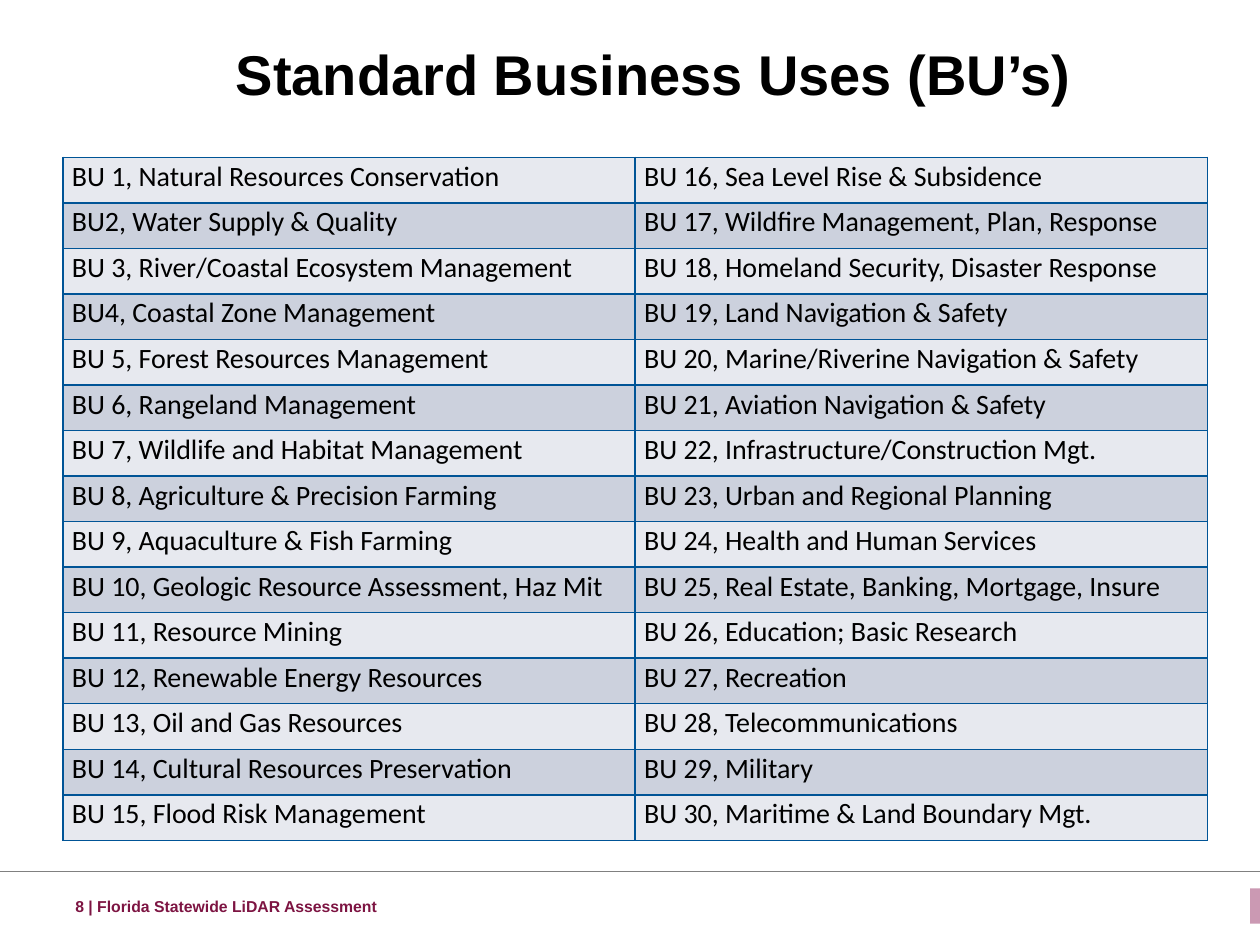
"""Build the Standard Business Uses slide."""
from lxml import etree
from pptx import Presentation
from pptx import util as u
from pptx.dml.color import RGBColor
from pptx.enum import shapes, text
from pptx.oxml import ns

TITLE = "Standard Business Uses (BU’s)"
FOOTER = "8 | Florida Statewide LiDAR Assessment"
USES = [
    ("BU 1, Natural Resources Conservation", "BU 16, Sea Level Rise & Subsidence"),
    ("BU2, Water Supply & Quality", "BU 17, Wildfire Management, Plan, Response"),
    ("BU 3, River/Coastal Ecosystem Management", "BU 18, Homeland Security, Disaster Response"),
    ("BU4, Coastal Zone Management", "BU 19, Land Navigation & Safety"),
    ("BU 5, Forest Resources Management", "BU 20, Marine/Riverine Navigation & Safety"),
    ("BU 6, Rangeland Management", "BU 21, Aviation Navigation & Safety"),
    ("BU 7, Wildlife and Habitat Management", "BU 22, Infrastructure/Construction Mgt."),
    ("BU 8, Agriculture & Precision Farming", "BU 23, Urban and Regional Planning"),
    ("BU 9, Aquaculture & Fish Farming", "BU 24, Health and Human Services"),
    ("BU 10, Geologic Resource Assessment, Haz Mit", "BU 25, Real Estate, Banking, Mortgage, Insure"),
    ("BU 11, Resource Mining", "BU 26, Education; Basic Research"),
    ("BU 12, Renewable Energy Resources", "BU 27, Recreation"),
    ("BU 13, Oil and Gas Resources", "BU 28, Telecommunications"),
    ("BU 14, Cultural Resources Preservation", "BU 29, Military"),
    ("BU 15, Flood Risk Management", "BU 30, Maritime & Land Boundary Mgt."),
]
THEME = {
    "heading_font": "Arial", "table_font": "Calibri",
    "title_size": 32, "table_size": 16, "footer_size": 9,
    "ink": "000000", "footer": "7D1442", "accent": "CB99B3",
    "rule": "808080", "border": "005496", "bands": ("E7E9EF", "CCD1DD"),
}


def rgb(name):
    return RGBColor.from_string(THEME[name])


def style(p, font, size, color, bold=False):
    p.font.name = THEME[font]
    p.font.size = u.Pt(THEME[size])
    p.font.color.rgb = rgb(color)
    p.font.bold = bold


def add_text(s, words, box, size, color, align):
    tf = s.shapes.add_textbox(*map(u.Cm, box)).text_frame
    tf.word_wrap = True
    tf.vertical_anchor = text.MSO_ANCHOR.MIDDLE
    p = tf.paragraphs[0]
    p.text = words
    p.alignment = align
    style(p, "heading_font", size, color, bold=True)


def add_borders(cell):
    tc_pr = cell._tc.get_or_add_tcPr()
    for i, side in enumerate("LRTB"):
        ln = etree.Element(ns.qn(f"a:ln{side}"), w=str(u.Pt(1)))
        fill = etree.SubElement(ln, ns.qn("a:solidFill"))
        etree.SubElement(fill, ns.qn("a:srgbClr"), val=THEME["border"])
        tc_pr.insert(i, ln)


def add_uses(s, left, top, width, height):
    table = s.shapes.add_table(
        len(USES), len(USES[0]), u.Cm(left), u.Cm(top), u.Cm(width), u.Cm(height)
    ).table
    table.first_row = False
    for i, row in enumerate(USES):
        table.rows[i].height = u.Cm(height / len(USES))
        for j, use in enumerate(row):
            cell = table.cell(i, j)
            cell.margin_left = cell.margin_right = u.Cm(0.18)
            cell.margin_top = cell.margin_bottom = 0
            cell.fill.solid()
            cell.fill.fore_color.rgb = RGBColor.from_string(THEME["bands"][i % 2])
            add_borders(cell)
            p = cell.text_frame.paragraphs[0]
            p.text = use
            p.line_spacing = 1.07
            style(p, "table_font", "table_size", "ink")


def add_footer(s, width):
    y = u.Cm(17.57)
    rule = s.shapes.add_connector(shapes.MSO_CONNECTOR.STRAIGHT, 0, y, width, y)
    rule.line.color.rgb = rgb("rule")
    rule.line.width = u.Pt(0.5)
    etree.SubElement(rule._element.spPr, ns.qn("a:effectLst"))
    sp = s.shapes.add_shape(
        shapes.MSO_SHAPE.RECTANGLE, u.Cm(25.2), u.Cm(17.91), u.Cm(0.2), u.Cm(0.71)
    )
    sp.shadow.inherit = False
    sp.fill.solid()
    sp.fill.fore_color.rgb = rgb("accent")
    sp.line.fill.background()
    add_text(s, FOOTER, (1.27, 17.98, 15.67, 0.56), "footer_size", "footer", text.PP_ALIGN.LEFT)


def main():
    prs = Presentation()
    prs.slide_width, prs.slide_height = u.Cm(25.4), u.Cm(19.05)
    s = prs.slides.add_slide(prs.slide_layouts[6])
    add_footer(s, prs.slide_width)
    add_text(s, TITLE, (1.85, 0.58, 22.66, 1.78), "title_size", "ink", text.PP_ALIGN.CENTER)
    add_uses(s, 1.27, 3.17, 23.07, 13.77)
    prs.save("out.pptx")


if __name__ == "__main__":
    main()
